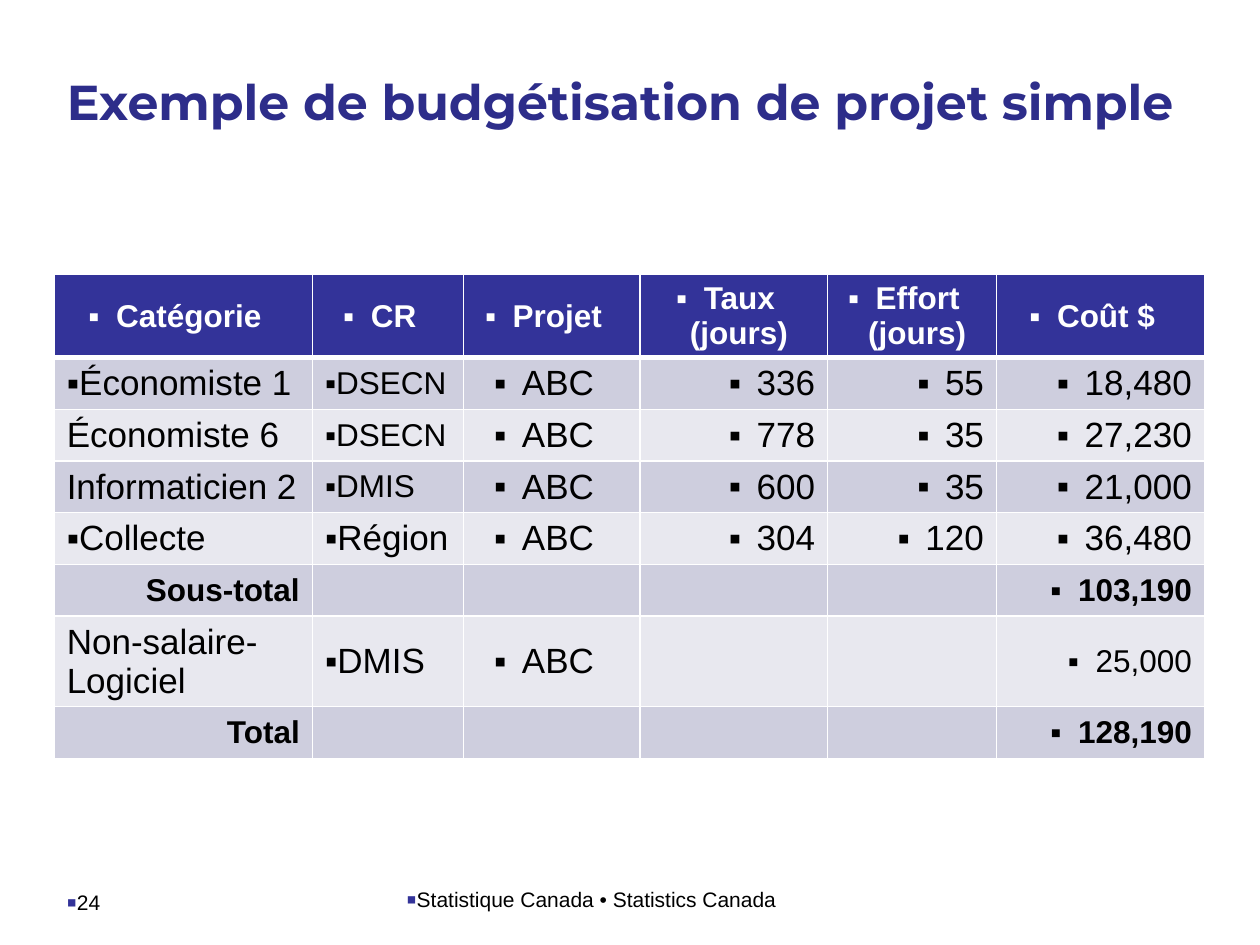
from lxml import etree
from pptx import Presentation
from pptx import util as u
from pptx.dml.color import RGBColor
from pptx.enum import text
from pptx.oxml.ns import qn

INDIGO, WHITE, BLACK = "333399", "FFFFFF", "000000"
LEFT, CENTER, RIGHT = text.PP_ALIGN.LEFT, text.PP_ALIGN.CENTER, text.PP_ALIGN.RIGHT


def color(value):
    return RGBColor.from_string(value)


def write(frame, words, size=20, font="Arial", fill=BLACK, bold=False, align=LEFT,
          bullet=None, bullet_size=100, margin=0, hanging=0):
    paragraph = frame.paragraphs[0]
    paragraph.alignment = align
    if bullet:
        properties = paragraph._p.get_or_add_pPr()
        properties.set("marL", str(u.Inches(margin)))
        properties.set("indent", str(-u.Inches(hanging)))
        bullet_color = etree.SubElement(properties, qn("a:buClr"))
        etree.SubElement(bullet_color, qn("a:srgbClr"), val=bullet)
        etree.SubElement(properties, qn("a:buSzPct"), val=str(bullet_size * 1000))
        etree.SubElement(properties, qn("a:buFont"), typeface="Arial")
        etree.SubElement(properties, qn("a:buChar"), char="▪")
    run = paragraph.add_run()
    run.text = words
    run.font.size = u.Pt(size)
    run.font.name = font
    run.font.bold = bold
    run.font.color.rgb = color(fill)


presentation = Presentation()
presentation.slide_width = u.Inches(10)
presentation.slide_height = u.Inches(7.5)
slide = presentation.slides.add_slide(presentation.slide_layouts[5])

title = slide.shapes.title
title.left, title.top = u.Inches(0.43), u.Inches(0.52)
title.width, title.height = u.Inches(9.37), u.Inches(1.02)
title.text_frame.vertical_anchor = text.MSO_ANCHOR.TOP
title.text_frame.auto_size = text.MSO_AUTO_SIZE.NONE
write(title.text_frame, "Exemple de budgétisation de projet simple",
      size=28, font="Montserrat", fill="2D2D8A", bold=True)

budget = [
    ["Catégorie", "CR", "Projet", "Taux (jours)", "Effort (jours)", "Coût $"],
    ["Économiste 1", "DSECN", "ABC", "336", "55", "18,480"],
    ["Économiste 6", "DSECN", "ABC", "778", "35", "27,230"],
    ["Informaticien 2", "DMIS", "ABC", "600", "35", "21,000"],
    ["Collecte", "Région", "ABC", "304", "120", "36,480"],
    ["Sous-total", "", "", "", "", "103,190"],
    ["Non-salaire-Logiciel", "DMIS", "ABC", "", "", "25,000"],
    ["Total", "", "", "", "", "128,190"],
]
column_widths = [2.05, 1.2, 1.4, 1.49, 1.34, 1.65]
row_heights = [0.66, 0.41, 0.41, 0.41, 0.41, 0.41, 0.72, 0.41]
column_aligns = [LEFT, LEFT, CENTER, RIGHT, RIGHT, RIGHT]
total_rows = (5, 7)
small_cells = [(1, 1), (2, 1), (3, 1), (6, 5)]
plain_cells = [(2, 0), (3, 0), (5, 0), (6, 0), (7, 0)]

table = slide.shapes.add_table(
    len(budget), len(column_widths), u.Inches(0.43), u.Inches(2.18),
    u.Inches(sum(column_widths)), u.Inches(sum(row_heights))).table
for column, width in zip(table.columns, column_widths):
    column.width = u.Inches(width)
for row, height in zip(table.rows, row_heights):
    row.height = u.Inches(height)

for r, values in enumerate(budget):
    header = r == 0
    strong = header or r in total_rows
    for c, words in enumerate(values):
        cell = table.cell(r, c)
        cell.vertical_anchor = text.MSO_ANCHOR.MIDDLE
        cell.margin_top = cell.margin_bottom = u.Inches(0.04)
        for side in ("lnL", "lnR", "lnT", "lnB"):
            thick = (header and side == "lnB") or (r == 1 and side == "lnT")
            border = etree.SubElement(cell._tc.get_or_add_tcPr(), qn("a:" + side),
                                      w=str(u.Pt(3 if thick else 1)))
            border_fill = etree.SubElement(border, qn("a:solidFill"))
            etree.SubElement(border_fill, qn("a:srgbClr"), val=WHITE)
        cell.fill.solid()
        cell.fill.fore_color.rgb = color(INDIGO if header else "CECEDE" if r % 2 else "E8E8EF")
        if not words:
            continue
        align = CENTER if header else RIGHT if strong else column_aligns[c]
        ink = WHITE if header else BLACK
        margin, hanging = (0, 0) if align == LEFT else (0.08, 0.22)
        write(cell.text_frame, words, size=18 if strong or (r, c) in small_cells else 20,
              fill=ink, bold=strong, align=align, margin=margin, hanging=hanging,
              bullet=None if (r, c) in plain_cells else ink)

footers = [
    ("Statistique Canada • Statistics Canada", 3.11, 6.99, 3.17, CENTER),
    ("24", 0.43, 7.01, 1.66, LEFT),
]
for words, left, top, width, align in footers:
    footer = slide.shapes.add_textbox(u.Inches(left), u.Inches(top), u.Inches(width), u.Inches(0.52))
    footer.text_frame.word_wrap = True
    write(footer.text_frame, words, size=12, align=align, bullet=INDIGO, bullet_size=140)

presentation.save("out.pptx")
